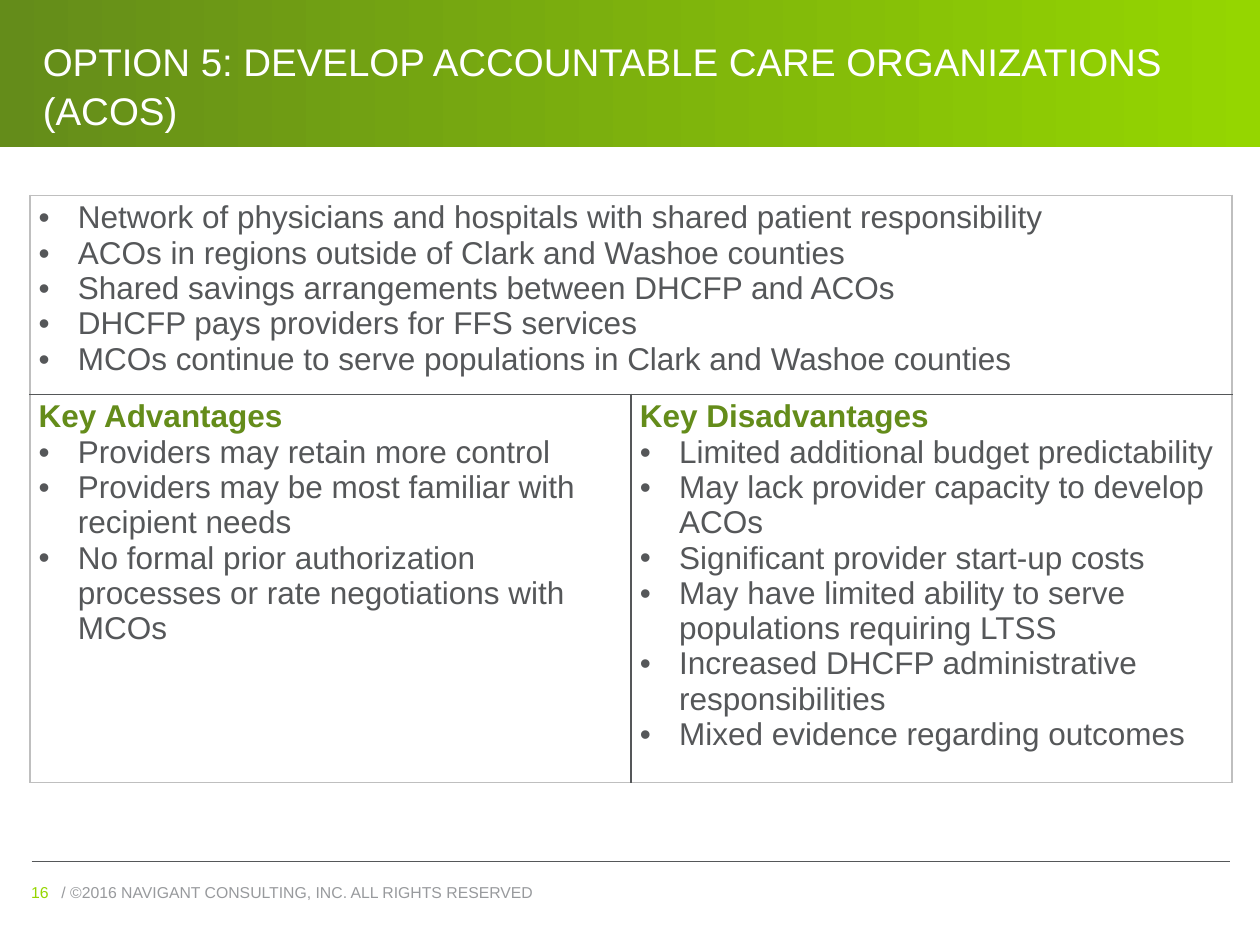
"""Build the slide on Option 5, developing accountable care organizations."""
from lxml import etree
from pptx import Presentation
from pptx.dml.color import RGBColor
from pptx.enum.shapes import MSO_CONNECTOR, MSO_SHAPE
from pptx.enum.text import MSO_ANCHOR, MSO_AUTO_SIZE, PP_ALIGN
from pptx.oxml.ns import qn
from pptx.util import Cm, Pt

STRAIGHT, RECT = MSO_CONNECTOR.STRAIGHT, MSO_SHAPE.RECTANGLE
BOTTOM, MIDDLE = MSO_ANCHOR.BOTTOM, MSO_ANCHOR.MIDDLE
LEFT, NO_FIT = PP_ALIGN.LEFT, MSO_AUTO_SIZE.NONE

THEME = {
    "font": "Arial",
    "dark": "648C1A", "lime": "95D600", "text": "555759",
    "muted": "989A9D", "border": "BFBFBF", "white": "FFFFFF",
    "title": 22, "body": 18, "footer": 9,
}

CELLS = {
    (0, 0): (None, [
        "Network of physicians and hospitals with shared patient responsibility",
        "ACOs in regions outside of Clark and Washoe counties",
        "Shared savings arrangements between DHCFP and ACOs",
        "DHCFP pays providers for FFS services",
        "MCOs continue to serve populations in Clark and Washoe counties",
    ]),
    (1, 0): ("Key Advantages", [
        "Providers may retain more control",
        "Providers may be most familiar with recipient needs",
        "No formal prior authorization processes or rate negotiations with MCOs",
    ]),
    (1, 1): ("Key Disadvantages", [
        "Limited additional budget predictability",
        "May lack provider capacity to develop ACOs",
        "Significant provider start-up costs",
        "May have limited ability to serve populations requiring LTSS",
        "Increased DHCFP administrative responsibilities",
        "Mixed evidence regarding outcomes",
    ]),
}
FOOTERS = [
    ("/ ©2016 NAVIGANT CONSULTING, INC. ALL RIGHTS RESERVED", 0.99, 16.18, "muted"),
    ("16", 0.38, 1.73, "lime"),
]


def add_text(p, text, size, color, bold=False):
    r = p.add_run()
    r.text = text
    for name, value in {"name": THEME["font"], "size": Pt(THEME[size]), "bold": bold}.items():
        setattr(r.font, name, value)
    r.font.color.rgb = RGBColor.from_string(THEME[color])


def add_border(tc_pr, index, side, color):
    ln = etree.Element(qn(f"a:ln{side}"), w=str(Pt(1)))
    fill = etree.SubElement(ln, qn("a:solidFill"))
    etree.SubElement(fill, qn("a:srgbClr"), val=THEME[color])
    tc_pr.insert(index, ln)


prs = Presentation()
prs.slide_width, prs.slide_height = Cm(25.4), Cm(19.05)
s = prs.slides.add_slide(prs.slide_layouts[5])

banner = s.shapes.add_shape(RECT, 0, 0, prs.slide_width, Cm(2.97))
banner.shadow.inherit = False
banner.line.fill.background()
banner.fill.gradient()
banner.fill.gradient_angle = 0
for stop, color, position in zip(banner.fill.gradient_stops, ("dark", "lime"), (0, 1)):
    stop.color.rgb = RGBColor.from_string(THEME[color])
    stop.position = position

rule = s.shapes.add_connector(STRAIGHT, Cm(0.64), Cm(17.37), Cm(24.79), Cm(17.37))
rule.line.color.rgb = RGBColor.from_string(THEME["text"])
rule.line.width = Pt(0.75)
etree.SubElement(rule.element.spPr, qn("a:effectLst"))

title = s.shapes.title
banner.element.addnext(title.element)
for name, value in {"left": 0.61, "top": 0, "width": 24.21, "height": 2.82}.items():
    setattr(title, name, Cm(value))
tf = title.text_frame
for name, value in {"word_wrap": True, "auto_size": NO_FIT, "vertical_anchor": BOTTOM}.items():
    setattr(tf, name, value)
p = tf.paragraphs[0]
p.alignment, p.line_spacing = LEFT, 1.07
add_text(p, "OPTION 5: DEVELOP ACCOUNTABLE CARE ORGANIZATIONS (ACOS)", "title", "white")

for text, left, width, color in FOOTERS:
    sp = s.shapes.add_textbox(Cm(left), Cm(17.69), Cm(width), Cm(0.58))
    tf = sp.text_frame
    for name, value in {"word_wrap": True, "vertical_anchor": MIDDLE,
                        "margin_top": 0, "margin_bottom": 0}.items():
        setattr(tf, name, value)
    add_text(tf.paragraphs[0], text, "footer", color)

heights = [3.35, 7.37]
frame = s.shapes.add_table(2, 2, Cm(0.6), Cm(3.94), Cm(24.24), Cm(sum(heights)))
table = frame.table
table.first_row = table.horz_banding = False
for row, height in zip(table.rows, heights):
    row.height = Cm(height)
table.cell(0, 0).merge(table.cell(0, 1))

for row in range(2):
    for col in range(2):
        cell = table.cell(row, col)
        cell.fill.background()
        for name, value in {"left": 0.18, "right": 0.18, "top": 0.1, "bottom": 0.1}.items():
            setattr(cell, f"margin_{name}", Cm(value))
        inner = {"L": row == 1 and col == 1, "R": row == 1 and col == 0,
                 "T": row == 1, "B": row == 0}
        tc_pr = cell.fill._xPr
        for index, (side, is_inner) in enumerate(inner.items()):
            add_border(tc_pr, index, side, "text" if is_inner else "border")

for (row, col), (heading, items) in CELLS.items():
    tf = table.cell(row, col).text_frame
    p = tf.paragraphs[0]
    if heading:
        add_text(p, heading, "body", "dark", bold=True)
    for i, item in enumerate(items):
        if heading or i:
            p = tf.add_paragraph()
        p_pr = p._p.get_or_add_pPr()
        p_pr.set("marL", str(Cm(0.79)))
        p_pr.set("indent", str(-Cm(0.79)))
        etree.SubElement(p_pr, qn("a:buFont"), typeface=THEME["font"])
        etree.SubElement(p_pr, qn("a:buChar"), char="•")
        add_text(p, item, "body", "text")

prs.save("out.pptx")
